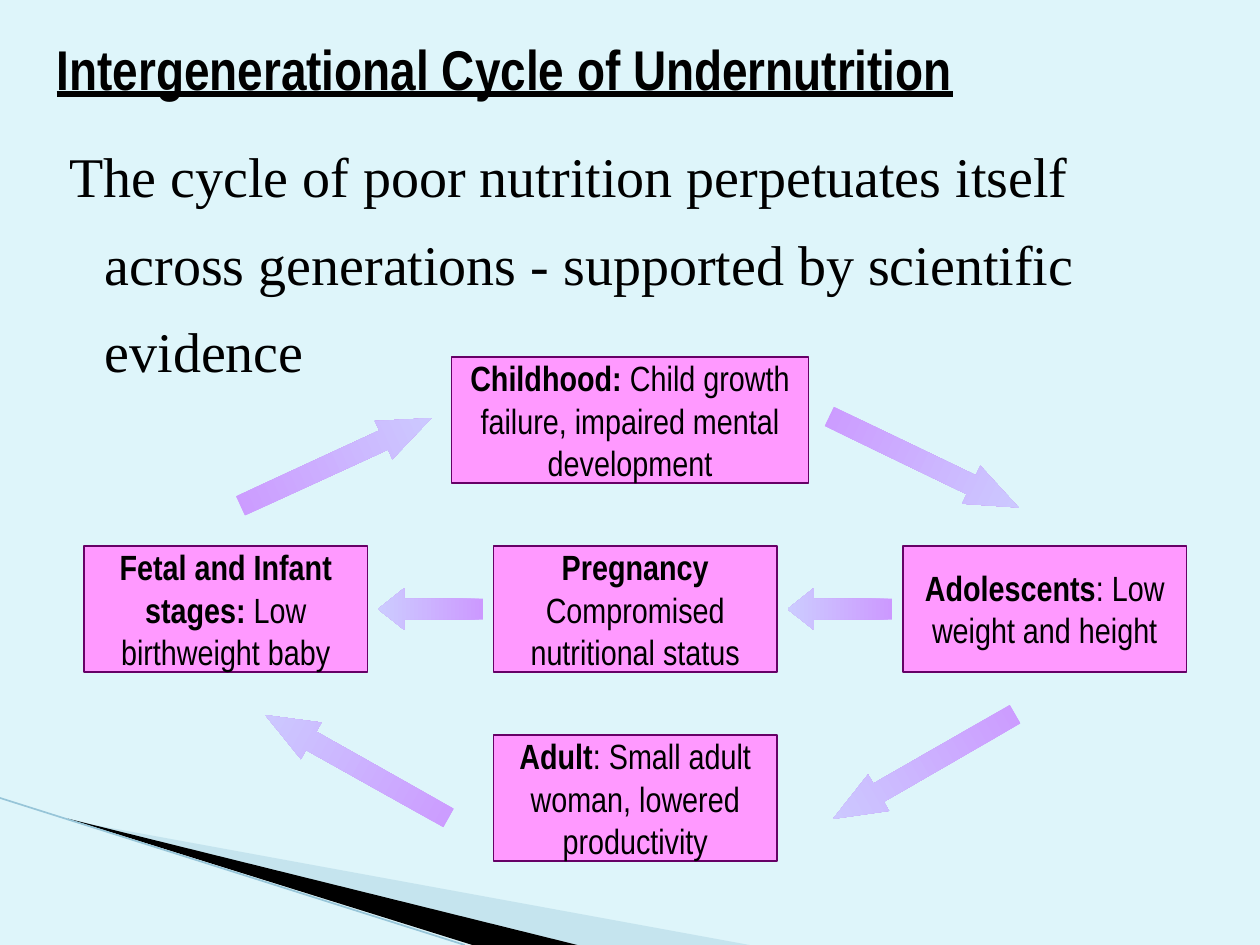
from dataclasses import dataclass

from lxml import etree
from pptx import Presentation
from pptx.dml.color import RGBColor
from pptx.enum.shapes import MSO_CONNECTOR, MSO_SHAPE
from pptx.enum.text import MSO_ANCHOR, MSO_AUTO_SIZE, PP_ALIGN
from pptx.oxml.ns import qn
from pptx.util import Inches, Pt

RECTANGLE, RIGHT_ARROW = MSO_SHAPE.RECTANGLE, MSO_SHAPE.RIGHT_ARROW
STRAIGHT = MSO_CONNECTOR.STRAIGHT
TOP, MIDDLE = MSO_ANCHOR.TOP, MSO_ANCHOR.MIDDLE
LEFT, CENTER = PP_ALIGN.LEFT, PP_ALIGN.CENTER
NO_FIT = MSO_AUTO_SIZE.NONE
TITLE_ONLY = 5

COLUMNS, ROWS = 120, 90
WIDTH, HEIGHT = Inches(10), Inches(7.5)


@dataclass(frozen=True)
class Theme:
    """Colours, fonts and type sizes of the slide."""
    background: str = "DEF5FA"
    ink: str = "000000"
    stage_fill: str = "FF99FF"
    stage_line: str = "660066"
    arrow_tail: str = "CC99FF"
    arrow_head: str = "CCCCFF"
    swoosh: str = "A0CBDC"
    swoosh_line: str = "97C5D8"
    heading_font: str = "Arial Narrow"
    statement_font: str = "Times New Roman"
    large: int = 32
    small: int = 20


THEME = Theme()

STAGE_WIDTH, STAGE_HEIGHT = 27, 12
STAGES = [
    (35, 0, 34, [[("Childhood:", True),
                  (" Child growth failure, impaired mental development", False)]]),
    (78, 18, STAGE_WIDTH, [[("Adolescents", True), (": Low weight and height", False)]]),
    (39, 18, STAGE_WIDTH, [[("Pregnancy", True)],
                           [("Compromised nutritional status", False)]]),
    (39, 36, STAGE_WIDTH, [[("Adult", True),
                            (": Small adult woman, lowered productivity", False)]]),
    (0, 18, STAGE_WIDTH, [[("Fetal and Infant stages:", True),
                           (" Low birthweight baby", False)]]),
]
LONG_ARROW, SHORT_ARROW, ARROW_HEIGHT = 20, 10, 4
ARROWS = [
    (70, 8, LONG_ARROW, 25.7),
    (70, 37, LONG_ARROW, 150.1),
    (16, 37, LONG_ARROW, 209.3),
    (14, 8, LONG_ARROW, 335.3),
    (67, 22, SHORT_ARROW, 180),
    (28, 22, SHORT_ARROW, 180),
]


def rgb(code):
    """Turn a hex code into a colour."""
    return RGBColor.from_string(code)


def grid(column, row):
    """Turn a grid position or size into slide lengths."""
    return round(column * WIDTH / COLUMNS), round(row * HEIGHT / ROWS)


def place(part, box):
    """Move and size a part to a box of columns and rows."""
    part.left, part.top = grid(*box[:2])
    part.width, part.height = grid(*box[2:])


def write(frame, paragraphs, font, size, align=LEFT, anchor=MIDDLE,
          underline=None, spacing=None):
    """Fill a frame with paragraphs made of (wording, bold) runs."""
    frame.word_wrap = True
    frame.auto_size = NO_FIT
    frame.vertical_anchor = anchor
    for index, runs in enumerate(paragraphs):
        paragraph = frame.add_paragraph() if index else frame.paragraphs[0]
        paragraph.alignment = align
        paragraph.line_spacing = spacing
        for wording, bold in runs:
            run = paragraph.add_run()
            run.text = wording
            run.font.name, run.font.size = font, Pt(size)
            run.font.bold, run.font.underline = bold, underline
            run.font.color.rgb = rgb(THEME.ink)


def add_swoosh(slide, box):
    """Draw the corner sweep of two wedges and an edge line."""
    left, top, width, height = box

    def point(across, down):
        return grid(left + across * width, top + down * height)

    wedges = [
        ([(0.09, 0.15), (1, 1), (0.77, 1)], THEME.swoosh, 40),
        ([(0.09, 0.14), (0.77, 1), (0.63, 1)], THEME.ink, 100),
    ]
    for corners, colour, opacity in wedges:
        start, *others = [point(*corner) for corner in corners]
        builder = slide.shapes.build_freeform(*start)
        builder.add_line_segments(others)
        wedge = builder.convert_to_shape()
        wedge.shadow.inherit = False
        wedge.fill.solid()
        wedge.fill.fore_color.rgb = rgb(colour)
        wedge.line.fill.background()
        if opacity < 100:
            tint = wedge.fill._xPr.find(qn("a:solidFill"))[0]
            etree.SubElement(tint, qn("a:alpha"), val=str(opacity * 1000))
    edge = slide.shapes.add_connector(STRAIGHT, *point(0, 0), *point(0.62, 1))
    edge.line.color.rgb = rgb(THEME.swoosh_line)
    edge.line.width = Pt(0.95)
    etree.SubElement(edge._element.spPr, qn("a:effectLst"))


def add_title(slide, box):
    """Place the underlined heading."""
    title = slide.shapes.title
    place(title, box)
    title.text_frame.margin_left = Inches(0.2)
    write(title.text_frame, [[("Intergenerational Cycle of Undernutrition", True)]],
          THEME.heading_font, THEME.large, underline=True)


def add_statement(slide, box):
    """Place the opening sentence with its hanging indent."""
    statement = slide.shapes.add_textbox(0, 0, 0, 0)
    place(statement, box)
    write(statement.text_frame,
          [[("The cycle of poor nutrition perpetuates itself across generations "
             "- supported by scientific evidence", False)]],
          THEME.statement_font, THEME.large, anchor=TOP, spacing=1.3)
    properties = statement.text_frame.paragraphs[0]._p.get_or_add_pPr()
    properties.set("marL", str(Inches(0.4)))
    properties.set("indent", str(Inches(-0.28)))


def add_stage(slide, box, paragraphs):
    """Draw one stage of life."""
    stage = slide.shapes.add_shape(RECTANGLE, 0, 0, 0, 0)
    place(stage, box)
    stage.shadow.inherit = False
    stage.fill.solid()
    stage.fill.fore_color.rgb = rgb(THEME.stage_fill)
    stage.line.color.rgb = rgb(THEME.stage_line)
    stage.line.width = Pt(1)
    write(stage.text_frame, paragraphs, THEME.heading_font, THEME.small, align=CENTER)


def add_arrow(slide, box, angle):
    """Draw a shaded block arrow turned to an angle."""
    arrow = slide.shapes.add_shape(RIGHT_ARROW, 0, 0, 0, 0)
    place(arrow, box)
    arrow.rotation = angle
    arrow.adjustments[0] = 0.5
    arrow.adjustments[1] = box[2] / box[3] / 4
    arrow.shadow.inherit = False
    arrow.line.fill.background()
    arrow.fill.gradient()
    arrow.fill.gradient_angle = 0
    for stop, colour in zip(arrow.fill.gradient_stops,
                            (THEME.arrow_tail, THEME.arrow_head)):
        stop.color.rgb = rgb(colour)


def add_cycle(slide, box):
    """Place the stages and the arrows that link them."""
    left, top = box[:2]
    for column, row, width, paragraphs in STAGES:
        add_stage(slide, (left + column, top + row, width, STAGE_HEIGHT), paragraphs)
    for column, row, length, angle in ARROWS:
        add_arrow(slide, (left + column, top + row, length, ARROW_HEIGHT), angle)


def main():
    """Build the slide and save it."""
    deck = Presentation()
    deck.slide_width, deck.slide_height = WIDTH, HEIGHT
    slide = deck.slides.add_slide(deck.slide_layouts[TITLE_ONLY])
    slide.background.fill.solid()
    slide.background.fill.fore_color.rgb = rgb(THEME.background)
    add_swoosh(slide, (0, 76, 71.4, 14))
    add_statement(slide, (4, 11, 109, 15))
    add_title(slide, (3, 2, 109, 9))
    add_cycle(slide, (8, 34, 105, 48))
    deck.save("out.pptx")


if __name__ == "__main__":
    main()
